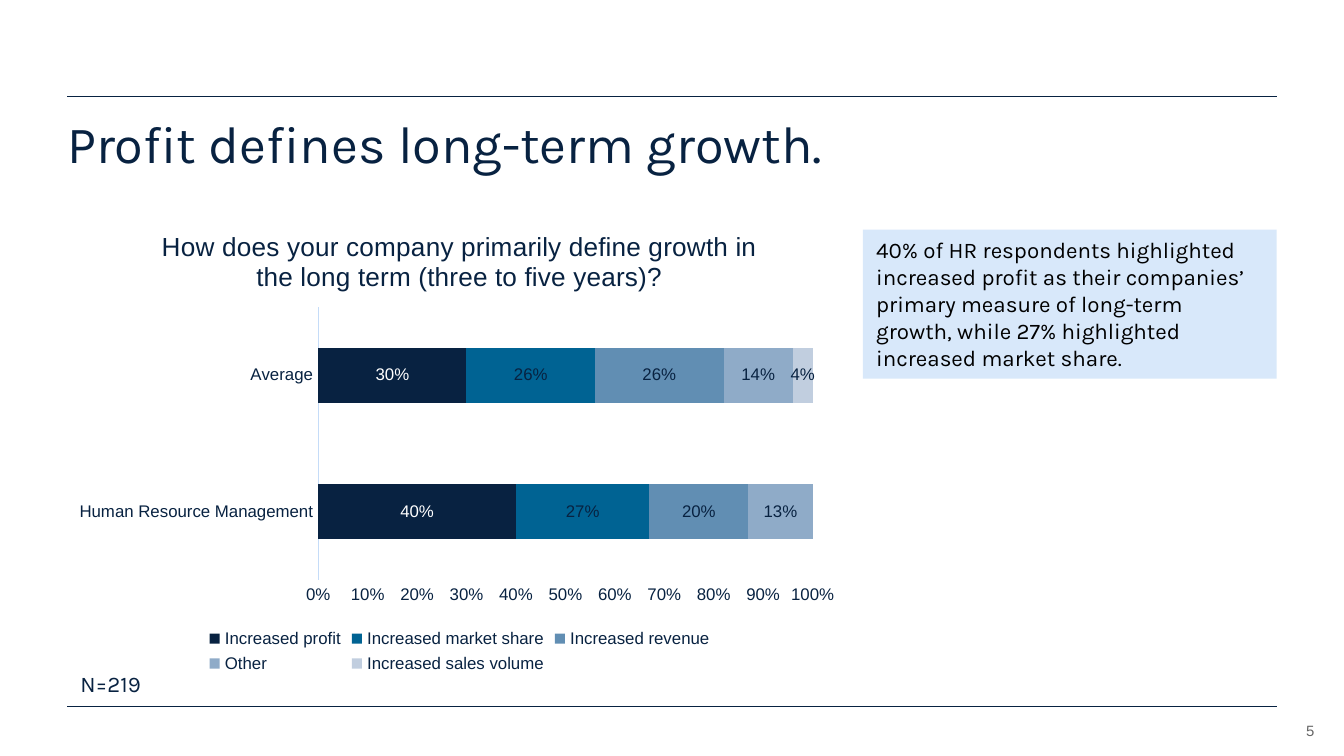
from dataclasses import dataclass

from lxml import etree
from pptx import Presentation
from pptx import util as u
from pptx.chart.data import CategoryChartData
from pptx.dml.color import RGBColor
from pptx.enum import chart as ch, shapes, text
from pptx.oxml import parse_xml
from pptx.oxml.ns import nsdecls, qn


@dataclass(frozen=True)
class Theme:
    navy: str = "082241"
    black: str = "000000"
    white: str = "FFFFFF"
    grey: str = "666666"
    callout: str = "D8E8FA"
    axis: str = "C5DCF8"
    bars: tuple = ("082241", "006393", "618EB3", "8FABC8", "C1CEDF")
    body_font: str = "Karla"
    chart_font: str = "Arial"
    title_size: int = 28
    chart_title_size: int = 14
    body_size: int = 12
    chart_size: int = 9
    small_size: int = 8


THEME = Theme()
LEFT, RIGHT = 1.27, 24.13

CATEGORIES = ("Human Resource Management", "Average")
SERIES = {
    "Increased profit": (0.40, 0.30),
    "Increased market share": (0.27, 0.26),
    "Increased revenue": (0.20, 0.26),
    "Other": (0.13, 0.14),
    "Increased sales volume": (None, 0.04),
}


def rgb(value):
    return RGBColor.from_string(value)


def set_font(font, name, size, color):
    font.name = name
    font.size = u.Pt(size)
    font.bold = False
    font.color.rgb = rgb(color)


def add_rule(slide, y):
    line = slide.shapes.add_connector(
        shapes.MSO_CONNECTOR.STRAIGHT, u.Cm(LEFT), u.Cm(y), u.Cm(RIGHT), u.Cm(y))
    line.line.color.rgb = rgb(THEME.navy)
    line.line.width = u.Pt(0.5)
    etree.SubElement(line._element.spPr, qn("a:effectLst"))


def write(sp, words, size, color, font=THEME.body_font, align=text.PP_ALIGN.LEFT,
          anchor=text.MSO_ANCHOR.TOP, inset=True):
    tf = sp.text_frame
    tf.word_wrap = True
    tf.vertical_anchor = anchor
    if not inset:
        tf.margin_left = tf.margin_right = tf.margin_top = tf.margin_bottom = 0
    p = tf.paragraphs[0]
    p.text = words
    p.alignment = align
    set_font(p.font, font, size, color)
    return p


def add_text(slide, box, words, size, color, **options):
    sp = slide.shapes.add_textbox(*map(u.Cm, box))
    return write(sp, words, size, color, **options)


def add_callout(slide, box, words):
    sp = slide.shapes.add_shape(shapes.MSO_SHAPE.RECTANGLE, *map(u.Cm, box))
    sp.shadow.inherit = False
    sp.fill.solid()
    sp.fill.fore_color.rgb = rgb(THEME.callout)
    sp.line.fill.background()
    write(sp, words, THEME.body_size, THEME.black)


def place_plot(chart, x, y, w, h):
    """Fix the inner plot area, in fractions of the chart."""
    area = chart._chartSpace.chart.plotArea
    for old in area.findall(qn("c:layout")):
        area.remove(old)
    area.insert(0, parse_xml(
        f'<c:layout {nsdecls("c")}><c:manualLayout><c:layoutTarget val="inner"/>'
        '<c:xMode val="edge"/><c:yMode val="edge"/>'
        f'<c:x val="{x}"/><c:y val="{y}"/><c:w val="{w}"/><c:h val="{h}"/>'
        '</c:manualLayout></c:layout>'))


def style_axis(axis):
    axis.has_major_gridlines = False
    axis.major_tick_mark = axis.minor_tick_mark = ch.XL_TICK_MARK.NONE
    set_font(axis.tick_labels.font, THEME.chart_font, THEME.chart_size, THEME.navy)


def style_series(series, color, label_color):
    series.format.fill.solid()
    series.format.fill.fore_color.rgb = rgb(color)
    labels = series.data_labels
    labels.show_value = True
    labels.position = ch.XL_LABEL_POSITION.CENTER
    labels.number_format = "0%"
    labels.number_format_is_linked = False
    set_font(labels.font, THEME.chart_font, THEME.chart_size, label_color)


def add_growth_chart(slide, box, title):
    data = CategoryChartData(number_format="0%")
    data.categories = CATEGORIES
    for name, values in SERIES.items():
        data.add_series(name, values)
    chart = slide.shapes.add_chart(
        ch.XL_CHART_TYPE.BAR_STACKED_100, *map(u.Cm, box), data).chart
    set_font(chart.font, THEME.chart_font, 10, THEME.navy)

    chart.has_title = True
    p = chart.chart_title.text_frame.paragraphs[0]
    p.text = title
    set_font(p.font, THEME.chart_font, THEME.chart_title_size, THEME.navy)
    chart.chart_title.include_in_layout = False

    chart.has_legend = True
    chart.legend.position = ch.XL_LEGEND_POSITION.BOTTOM
    chart.legend.include_in_layout = False
    set_font(chart.legend.font, THEME.chart_font, THEME.chart_size, THEME.navy)

    style_axis(chart.category_axis)
    chart.category_axis.format.line.color.rgb = rgb(THEME.axis)
    chart.category_axis.format.line.width = u.Pt(0.75)
    value_axis = chart.value_axis
    style_axis(value_axis)
    value_axis.format.line.fill.background()
    value_axis.minimum_scale, value_axis.maximum_scale = 0, 1
    value_axis.major_unit = 0.1
    value_axis.tick_labels.number_format = "0%"
    value_axis.tick_labels.number_format_is_linked = False

    plot = chart.plots[0]
    plot.gap_width, plot.overlap = 150, 100
    plot.vary_by_categories = False
    for series, color in zip(plot.series, THEME.bars):
        style_series(series, color, THEME.white if color == THEME.navy else THEME.navy)
    place_plot(chart, 0.32, 0.21, 0.63, 0.58)


def main():
    prs = Presentation()
    prs.slide_width, prs.slide_height = u.Cm(25.4), u.Cm(14.29)
    slide = prs.slides.add_slide(prs.slide_layouts[6])

    for y in (1.83, 13.36):
        add_rule(slide, y)
    add_text(slide, (23.65, 13.51, 1.19, 0.46), "5", THEME.small_size, THEME.grey,
             font=THEME.chart_font, align=text.PP_ALIGN.RIGHT,
             anchor=text.MSO_ANCHOR.BOTTOM, inset=False)
    title = add_text(slide, (LEFT, 2.24, RIGHT - LEFT, 1.4),
                     "Profit defines long-term growth.",
                     THEME.title_size, THEME.navy, inset=False)
    title.line_spacing = 0.9
    add_callout(slide, (16.31, 4.34, 7.82, 2.82),
                "40% of HR respondents highlighted increased profit as their companies’ "
                "primary measure of long-term growth, while 27% highlighted increased "
                "market share.")
    add_growth_chart(slide, (LEFT, 3.94, 14.83, 8.89),
                     "How does your company primarily define growth in the long term "
                     "(three to five years)?")
    add_text(slide, (LEFT, 12.55, 3.02, 0.76), "N=219", THEME.body_size, THEME.navy)
    prs.save("out.pptx")


if __name__ == "__main__":
    main()
